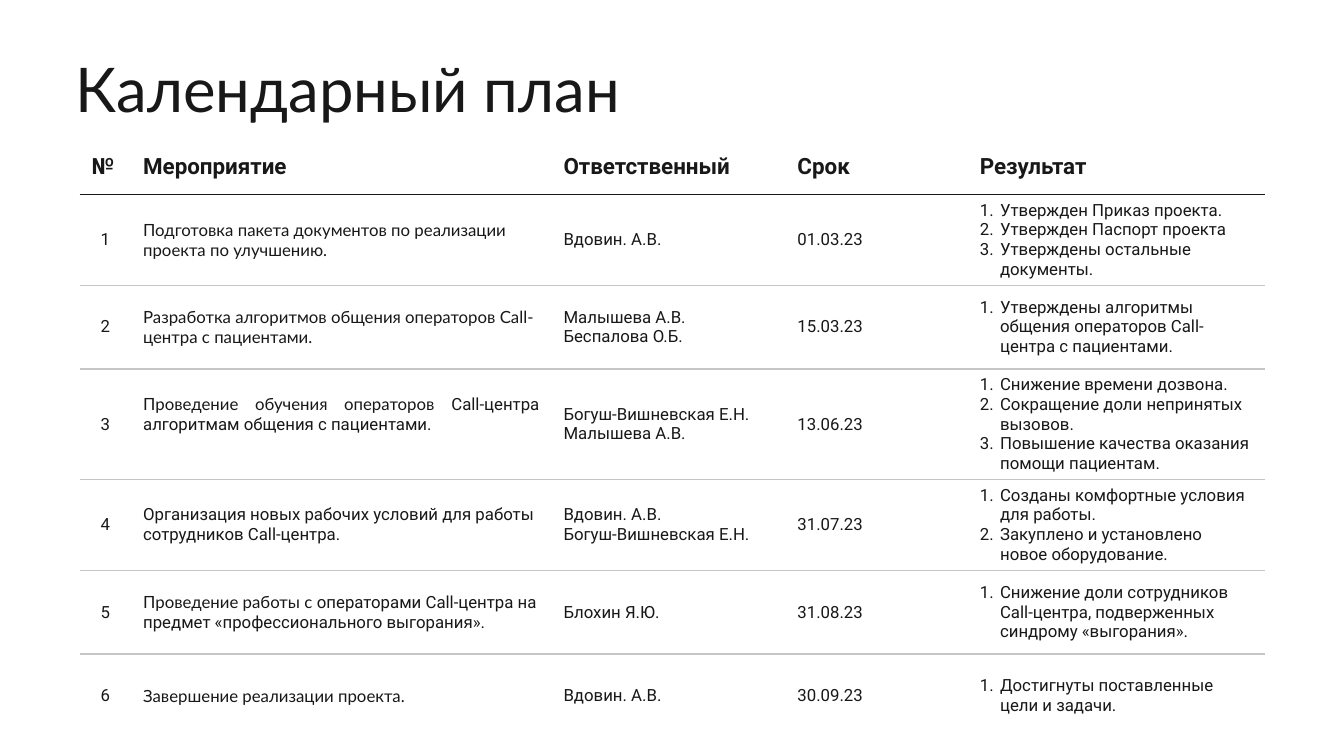
from dataclasses import dataclass

from lxml.etree import SubElement
from pptx import Presentation
from pptx.dml.color import RGBColor
from pptx.enum.text import MSO_ANCHOR, MSO_AUTO_SIZE, PP_ALIGN
from pptx.oxml.ns import qn
from pptx.util import Inches, Pt

INK = RGBColor(0x18, 0x18, 0x18)
RULE = RGBColor(0xC5, 0xC5, 0xC5)
LATO, BODY = "Lato", "Roboto"
WIDTHS = (0.51, 4.17, 2.32, 1.81, 2.95)
HEAD_H, ROW_H = 0.55, 0.83
HEADS = ("№", "Мероприятие", "Ответственный", "Срок", "Результат")


@dataclass(frozen=True)
class Span:
    text: str
    font: str = BODY


@dataclass(frozen=True)
class Task:
    name: tuple[Span, ...]
    staff: tuple[str, ...]
    date: str
    goals: tuple[str, ...]
    align: PP_ALIGN = PP_ALIGN.LEFT
    foot: float = 0.06


@dataclass(frozen=True)
class Edge:
    color: RGBColor
    width: float


DARK, PALE = Edge(INK, 1.5), Edge(RULE, 1)

TASKS = (
    Task((Span("Подготовка пакета документов по реализации проекта по улучшению.", LATO),),
         ("Вдовин. А.В.",), "01.03.23",
         ("Утвержден Приказ проекта.", "Утвержден Паспорт проекта",
          "Утверждены остальные документы.")),
    Task((Span("Разработка алгоритмов общения операторов Call-центра с пациентами.", LATO),),
         ("Малышева А.В.", "Беспалова О.Б."), "15.03.23",
         ("Утверждены алгоритмы общения операторов Call-центра с пациентами.",)),
    Task((Span("Проведение обучения операторов ", LATO),
          Span("Call-центра алгоритмам общения с пациентами.")),
         ("Богуш-Вишневская Е.Н.", "Малышева А.В."), "13.06.23",
         ("Снижение времени дозвона.", "Сокращение доли непринятых вызовов.",
          "Повышение качества оказания помощи пациентам."),
         PP_ALIGN.JUSTIFY, 0.26),
    Task((Span("Организация новых рабочих условий для работы сотрудников Call-центра."),),
         ("Вдовин. А.В.", "Богуш-Вишневская Е.Н."), "31.07.23",
         ("Созданы комфортные условия для работы.",
          "Закуплено и установлено новое оборудование.")),
    Task((Span("Проведение работы с ", LATO),
          Span("операторами Call-центра на предмет «профессионального выгорания».")),
         ("Блохин Я.Ю.",), "31.08.23",
         ("Снижение доли сотрудников Call-центра, подверженных синдрому «выгорания».",)),
    Task((Span("Завершение реализации проекта.", LATO),),
         ("Вдовин. А.В.",), "30.09.23",
         ("Достигнуты поставленные цели и задачи.",)),
)


def add_run(para, span: Span, size: float, bold: bool = False) -> None:
    run = para.add_run()
    run.text = span.text
    font = run.font
    font.name, font.size, font.bold = span.font, Pt(size), bold
    font.color.rgb = INK


def add_number(para) -> None:
    props = para._p.get_or_add_pPr()
    props.set("marL", str(Inches(0.2)))
    props.set("indent", str(-Inches(0.2)))
    SubElement(props, qn("a:buFont"), typeface="+mj-lt")
    SubElement(props, qn("a:buAutoNum"), type="arabicPeriod")


def set_edges(cell, top: Edge | None, bottom: Edge | None) -> None:
    props = cell._tc.get_or_add_tcPr()
    for side, edge in (("L", None), ("R", None), ("T", top), ("B", bottom)):
        line = SubElement(props, qn(f"a:ln{side}"))
        if edge:
            line.set("w", str(Pt(edge.width)))
            fill = SubElement(line, qn("a:solidFill"))
            SubElement(fill, qn("a:srgbClr"), val=str(edge.color))
        else:
            SubElement(line, qn("a:noFill"))
    cell.fill.background()


def fill_cell(cell, lines: tuple[tuple[Span, ...], ...], size: float = 12,
              bold: bool = False, align: PP_ALIGN = PP_ALIGN.LEFT,
              listed: bool = False, foot: float = 0.06) -> None:
    cell.vertical_anchor = MSO_ANCHOR.MIDDLE
    cell.margin_left = cell.margin_right = Inches(0.12)
    cell.margin_top, cell.margin_bottom = Inches(0.06), Inches(foot)
    frame = cell.text_frame
    for i, line in enumerate(lines):
        para = frame.add_paragraph() if i else frame.paragraphs[0]
        para.alignment = align
        if listed:
            add_number(para)
        for span in line:
            add_run(para, span, size, bold)


def plain(*texts: str) -> tuple[tuple[Span, ...], ...]:
    return tuple((Span(text),) for text in texts)


def add_title(slide) -> None:
    title = slide.shapes.title
    title.left, title.top = Inches(0.65), Inches(0.52)
    title.width, title.height = Inches(12.67), Inches(0.79)
    frame = title.text_frame
    frame.auto_size = MSO_AUTO_SIZE.NONE
    frame.vertical_anchor = MSO_ANCHOR.MIDDLE
    para = frame.paragraphs[0]
    para.alignment, para.line_spacing = PP_ALIGN.LEFT, 0.9
    add_run(para, Span("Календарный план", LATO), 44)


def add_plan(slide) -> None:
    count = len(TASKS)
    frame = slide.shapes.add_table(
        count + 1, len(WIDTHS), Inches(0.79), Inches(1.38),
        Inches(sum(WIDTHS)), Inches(HEAD_H + count * ROW_H))
    table = frame.table
    table.first_row = table.horz_banding = False
    for col, width in zip(table.columns, WIDTHS):
        col.width = Inches(width)

    # Header and rules
    for r, row in enumerate(table.rows):
        row.height = Inches(ROW_H if r else HEAD_H)
        top = (None, DARK)[r] if r < 2 else PALE
        bottom = DARK if r == 0 else PALE if r < count else None
        for cell in row.cells:
            set_edges(cell, top, bottom)
    for c, head in enumerate(HEADS):
        fill_cell(table.cell(0, c), plain(head), 16, True)

    # Tasks
    for r, task in enumerate(TASKS, 1):
        num, name, staff, date, goals = table.rows[r].cells
        fill_cell(num, plain(str(r)), align=PP_ALIGN.CENTER)
        fill_cell(name, (task.name,), align=task.align, foot=task.foot)
        fill_cell(staff, plain(*task.staff))
        fill_cell(date, plain(task.date))
        fill_cell(goals, plain(*task.goals), listed=True)


def main() -> None:
    deck = Presentation()
    deck.slide_width, deck.slide_height = Inches(13.33), Inches(7.5)
    slide = deck.slides.add_slide(deck.slide_layouts[5])
    add_title(slide)
    add_plan(slide)
    deck.save("out.pptx")


if __name__ == "__main__":
    main()
